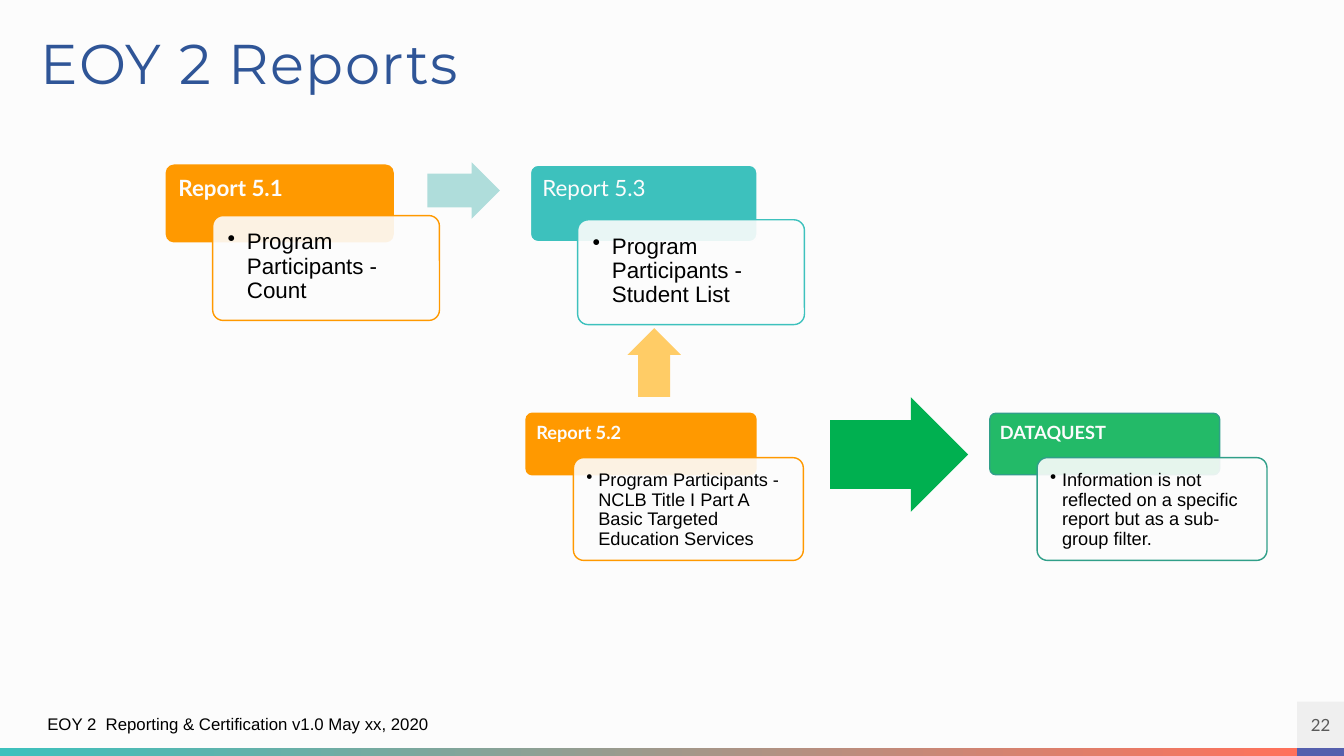
"""Build the EOY 2 Reports slide: report cards linked by block arrows."""
import dataclasses
import typing

import lxml.etree
import pptx
import pptx.dml.color
import pptx.enum.shapes
import pptx.enum.text
import pptx.oxml.ns
import pptx.util

Pt = pptx.util.Pt
Shapes = pptx.enum.shapes.MSO_SHAPE
Align = pptx.enum.text.PP_ALIGN
Anchor = pptx.enum.text.MSO_ANCHOR
Box = tuple[float, float, float, float]


@dataclasses.dataclass(frozen=True)
class Theme:
    paper: str = "FCFCFC"
    ink: str = "000000"
    title: str = "2F5597"
    orange: str = "FF9900"
    teal: str = "3DC1BD"
    green: str = "00B050"
    green_line: str = "309F89"
    pale_teal: str = "AFDDDB"
    pale_orange: str = "FFCC66"
    coral: str = "FF715B"
    indigo: str = "555FAD"
    number_fill: str = "EFEFEF"
    number_ink: str = "595959"
    title_size: float = 40
    large: float = 16
    medium: float = 13
    small: float = 12
    heading_font: str = "Montserrat"
    label_font: str = "Lato"
    body_font: str = "Arial"


THEME = Theme()


@dataclasses.dataclass(frozen=True)
class CardStyle:
    width: float
    header_height: float
    panel_height: float
    text_size: float
    header_inset: float
    panel_inset: float
    indent: float


@dataclasses.dataclass(frozen=True)
class Card:
    style: CardStyle
    header_at: tuple[float, float]
    panel_shift: tuple[float, float]
    label: str
    detail: str
    fill: str
    header_line: str
    panel_line: str
    bold: bool = True
    header_opacity: int = 100


@dataclasses.dataclass(frozen=True)
class Arrow:
    box: Box
    fill: str
    rotation: float = 0


LARGE = CardStyle(162, 54.7, 74.9, THEME.large, 7.2, 8.6, 13.7)
SMALL = CardStyle(164.2, 43.9, 73.4, THEME.medium, 6, 7.2, 8.6)

CARDS = (
    Card(LARGE, (118.8, 118), (33.1, 36), "Report 5.1", "Program Participants - Count",
         THEME.orange, THEME.orange, THEME.orange),
    Card(LARGE, (378.8, 118), (33.8, 39), "Report 5.3", "Program Participants - Student List",
         THEME.teal, THEME.paper, THEME.teal, bold=False),
    Card(SMALL, (375.8, 295.2), (33.8, 31.7), "Report 5.2",
         "Program Participants - NCLB Title I Part A Basic Targeted Education Services",
         THEME.orange, THEME.orange, THEME.orange),
    Card(SMALL, (707, 295.2), (33.8, 31.7), "DATAQUEST",
         "Information is not reflected on a specific report but as a sub-group filter.",
         THEME.green, THEME.green_line, THEME.green_line, header_opacity=86),
)

ARROWS = (
    Arrow((305.3, 116, 51.8, 40.3), THEME.pale_teal),
    Arrow((442.8, 239.8, 49, 38.2), THEME.pale_orange, 270),
    Arrow((593, 283.7, 98.6, 82), THEME.green),
)


def apply_format(target: typing.Any, values: dict[str, typing.Any]) -> None:
    for name, value in values.items():
        setattr(target, name, value)


def colour(value: str) -> pptx.dml.color.RGBColor:
    return pptx.dml.color.RGBColor.from_string(value)


def add_box(slide: typing.Any, kind: Shapes, box: Box, fill: str,
            line: str | None = None, opacity: int = 100) -> typing.Any:
    shape = slide.shapes.add_shape(kind, *map(Pt, box))
    shape.shadow.inherit = False
    shape.fill.solid()
    shape.fill.fore_color.rgb = colour(fill)
    if opacity < 100:
        tint = shape.fill._xPr.find(".//" + pptx.oxml.ns.qn("a:srgbClr"))
        alpha = lxml.etree.SubElement(tint, pptx.oxml.ns.qn("a:alpha"))
        alpha.set("val", str(opacity * 1000))
    if line:
        shape.line.color.rgb = colour(line)
        shape.line.width = Pt(1)
    else:
        shape.line.fill.background()
    return shape


def write_text(shape: typing.Any, text: str, font: str, size: float, ink: str,
               inset: float = 0, anchor: Anchor = Anchor.MIDDLE,
               align: Align = Align.LEFT, bold: bool = False,
               line_spacing: float = 1, indent: float = 0) -> typing.Any:
    frame = shape.text_frame
    apply_format(frame, {
        "word_wrap": True, "vertical_anchor": anchor,
        "margin_left": Pt(inset), "margin_top": Pt(inset),
        "margin_right": Pt(inset), "margin_bottom": Pt(inset),
    })
    paragraph = frame.paragraphs[0]
    apply_format(paragraph, {"alignment": align, "line_spacing": line_spacing})
    if indent:
        properties = paragraph._p.get_or_add_pPr()
        properties.set("marL", str(Pt(indent)))
        properties.set("indent", str(-Pt(indent)))
        bullet = lxml.etree.SubElement(properties, pptx.oxml.ns.qn("a:buChar"))
        bullet.set("char", "•")
    run = paragraph.add_run()
    run.text = text
    apply_format(run.font, {"name": font, "size": Pt(size), "bold": bold})
    run.font.color.rgb = colour(ink)
    return run


def add_card(slide: typing.Any, card: Card) -> None:
    style = card.style
    left, top = card.header_at
    header = add_box(slide, Shapes.ROUNDED_RECTANGLE,
                     (left, top, style.width, style.header_height),
                     card.fill, card.header_line, card.header_opacity)
    panel = add_box(slide, Shapes.ROUNDED_RECTANGLE,
                    (left + card.panel_shift[0], top + card.panel_shift[1],
                     style.width, style.panel_height),
                    THEME.paper, card.panel_line, 90)
    for shape in (header, panel):
        shape.adjustments[0] = 0.1
    write_text(header, card.label, THEME.label_font, style.text_size, THEME.paper,
               style.header_inset, Anchor.TOP, bold=card.bold, line_spacing=0.9)
    write_text(panel, card.detail, THEME.body_font, style.text_size, THEME.ink,
               style.panel_inset, Anchor.TOP, line_spacing=0.9, indent=style.indent)


def add_arrow(slide: typing.Any, arrow: Arrow) -> None:
    shape = add_box(slide, Shapes.RIGHT_ARROW, arrow.box, arrow.fill)
    shape.adjustments[0] = 0.6
    shape.adjustments[1] = 0.5
    shape.rotation = arrow.rotation


def add_title(slide: typing.Any) -> None:
    title = slide.shapes.title
    apply_format(title, {"left": Pt(21.6), "top": Pt(16.6),
                         "width": Pt(866.9), "height": Pt(55.4)})
    run = write_text(title, "EOY 2 Reports", THEME.heading_font,
                     THEME.title_size, THEME.title)
    run._r.get_or_add_rPr().set("spc", "110")
    apply_format(title.text_frame, {"margin_left": Pt(7.2), "margin_right": Pt(7.2)})


def add_footer(slide: typing.Any) -> None:
    band = add_box(slide, Shapes.RECTANGLE, (0, 534.2, 926.6, 5.8), THEME.teal)
    band.fill.gradient()
    band.fill.gradient_angle = 0
    for stop, value in zip(band.fill.gradient_stops, (THEME.teal, THEME.coral)):
        stop.color.rgb = colour(value)
    add_box(slide, Shapes.RECTANGLE, (926.6, 534.2, 33.4, 5.8), THEME.indigo)
    note = slide.shapes.add_textbox(Pt(33.8), Pt(501.1), Pt(430.6), Pt(32.4))
    write_text(note, "EOY 2  Reporting & Certification v1.0 May xx, 2020",
               THEME.body_font, THEME.small, THEME.ink)
    number = add_box(slide, Shapes.RECTANGLE, (926.6, 501.1, 33.4, 33.1), THEME.number_fill)
    write_text(number, "22", THEME.label_font, THEME.small, THEME.number_ink,
               align=Align.CENTER)


def main() -> None:
    presentation = pptx.Presentation()
    apply_format(presentation, {"slide_width": Pt(960), "slide_height": Pt(540)})
    slide = presentation.slides.add_slide(presentation.slide_layouts.get_by_name("Title Only"))
    slide.background.fill.solid()
    slide.background.fill.fore_color.rgb = colour(THEME.paper)
    add_title(slide)
    for card in CARDS:
        add_card(slide, card)
    for arrow in ARROWS:
        add_arrow(slide, arrow)
    add_footer(slide)
    presentation.save("out.pptx")


if __name__ == "__main__":
    main()
